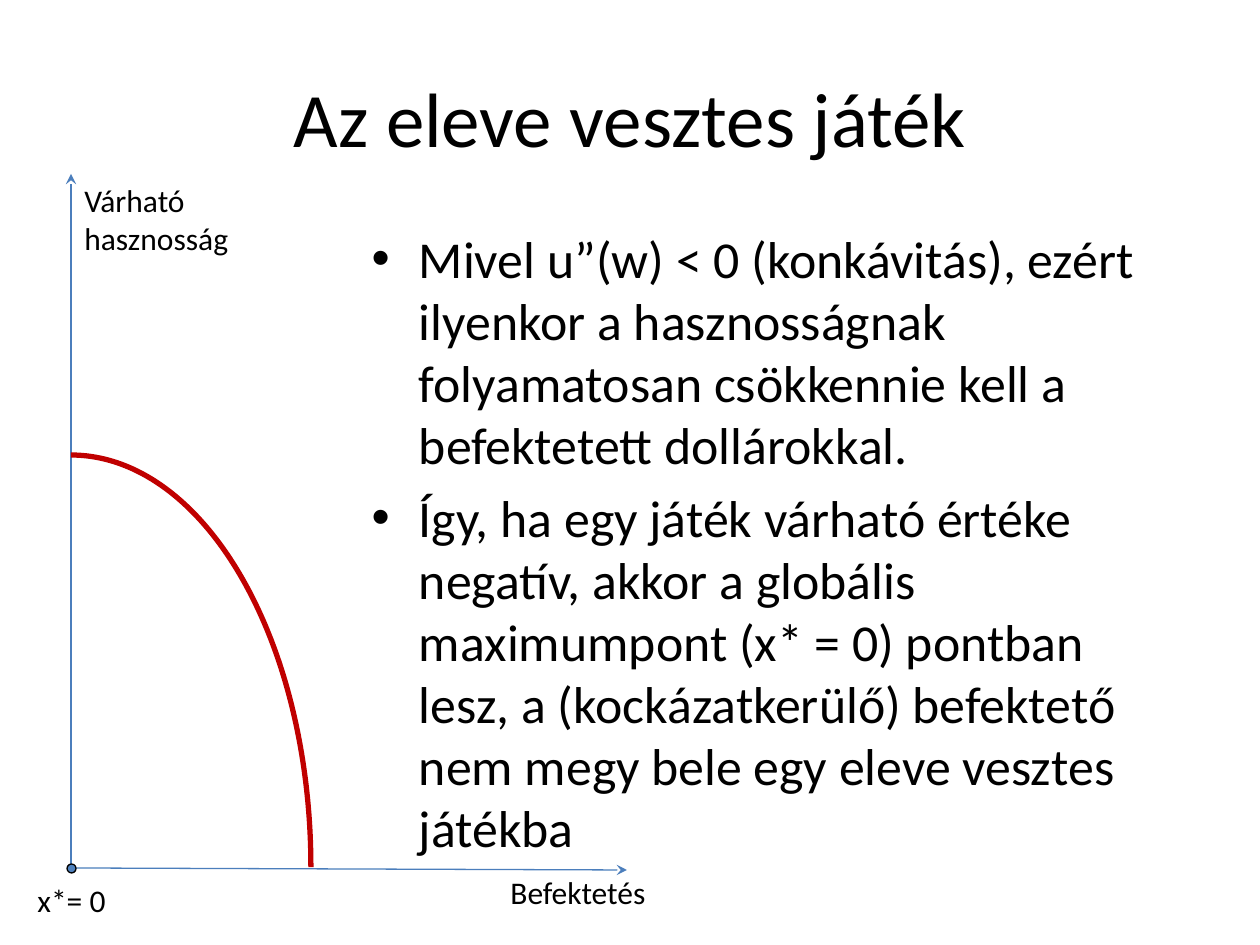
from lxml import etree
from pptx import Presentation
from pptx import util as u
from pptx.dml.color import RGBColor
from pptx.enum import shapes, text
from pptx.oxml.ns import qn

BLACK = RGBColor(0x00, 0x00, 0x00)
AXIS_BLUE = RGBColor(0x4B, 0x7E, 0xBC)
POINT_BLUE = RGBColor(0x4F, 0x81, 0xBD)
CURVE_RED = RGBColor(0xC0, 0x00, 0x00)
FONT = "Calibri"

TITLE = ("Az eleve vesztes játék", (63, 38, 1134, 157))
BODY = (
    "Mivel u”(w) < 0 (konkávitás), ezért ilyenkor a hasznosságnak "
    "folyamatosan csökkennie kell a befektetett dollárokkal.\n"
    "Így, ha egy játék várható értéke negatív, akkor a globális "
    "maximumpont (x* = 0) pontban lesz, a (kockázatkerülő) befektető "
    "nem megy bele egy eleve vesztes játékba",
    (359, 220, 838, 624),
)
LABELS = [
    ("Várható\nhasznosság", (72, 175, 287, 89)),
    ("Befektetés", (498, 867, 208, 53)),
    ("x*= 0", (25, 875, 118, 50)),
]
ORIGIN = (71, 868)
AXIS_ENDS = [(71, 174), (627, 870)]
CURVE_BOX = (-169, 455, 480, 824)
POINT_BOX = (67, 864, 9, 9)


def px(*lengths):
    return [u.Emu(round(length * 914400 / 126)) for length in lengths]


def place(shape, box):
    shape.left, shape.top, shape.width, shape.height = px(*box)


def write(shape, content, size):
    frame = shape.text_frame
    frame.word_wrap = True
    frame.text = content
    for paragraph in frame.paragraphs:
        for run in paragraph.runs:
            run.font.size = u.Pt(size)
            run.font.name = FONT
            run.font.color.rgb = BLACK


def add_axis(slide, end):
    axis = slide.shapes.add_connector(
        shapes.MSO_CONNECTOR.STRAIGHT, *px(*ORIGIN, *end))
    axis.line.color.rgb = AXIS_BLUE
    axis.line.width = u.Pt(0.75)
    etree.SubElement(axis.line._get_or_add_ln(), qn("a:tailEnd"), type="stealth")
    etree.SubElement(axis._element.spPr, qn("a:effectLst"))


def add_outline(slide, kind, box, color, width):
    shape = slide.shapes.add_shape(kind, *px(*box))
    shape.shadow.inherit = False
    shape.line.color.rgb = color
    shape.line.width = u.Pt(width)
    return shape


def main():
    presentation = Presentation()
    presentation.slide_width, presentation.slide_height = px(1260, 945)
    slide = presentation.slides.add_slide(presentation.slide_layouts[1])

    for placeholder, (content, box), size in zip(
            slide.placeholders, (TITLE, BODY), (44, 29.6)):
        place(placeholder, box)
        write(placeholder, content, size)
    slide.shapes.title.text_frame.vertical_anchor = text.MSO_ANCHOR.MIDDLE

    for end in AXIS_ENDS:
        add_axis(slide, end)

    for content, box in LABELS:
        write(slide.shapes.add_textbox(*px(*box)), content, 18)

    curve = add_outline(
        slide, shapes.MSO_SHAPE.ARC, CURVE_BOX, CURVE_RED, 3)
    curve.fill.background()
    point = add_outline(
        slide, shapes.MSO_SHAPE.OVAL, POINT_BOX, BLACK, 0.75)
    point.fill.solid()
    point.fill.fore_color.rgb = POINT_BLUE

    presentation.save("out.pptx")


if __name__ == "__main__":
    main()
